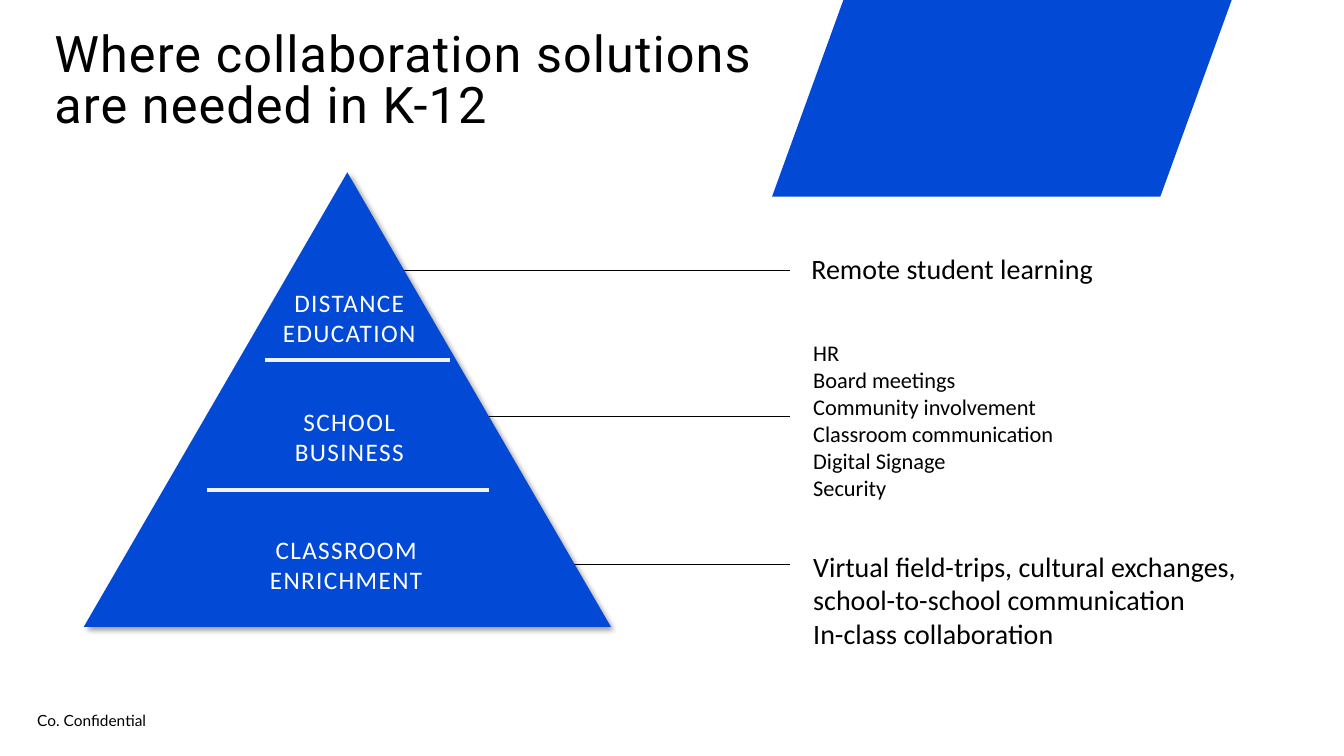
from lxml import etree
from pptx import Presentation
from pptx.dml.color import RGBColor
from pptx.enum.shapes import MSO_CONNECTOR, MSO_SHAPE
from pptx.enum.text import MSO_ANCHOR, PP_ALIGN
from pptx.oxml.ns import qn
from pptx.util import Pt

LINE = MSO_CONNECTOR.STRAIGHT
TRIANGLE, PARALLELOGRAM = MSO_SHAPE.ISOSCELES_TRIANGLE, MSO_SHAPE.PARALLELOGRAM
TOP, MIDDLE = MSO_ANCHOR.TOP, MSO_ANCHOR.MIDDLE
LEFT, CENTER = PP_ALIGN.LEFT, PP_ALIGN.CENTER
BLUE, BLACK, WHITE, PALE = "0249D6", "000000", "FFFFFF", "F2F2F2"

TITLE = "Where collaboration solutions are needed in K-12"
FOOTER = "Co. Confidential"
TIERS = [
    (["DISTANCE", "EDUCATION"], 139, 201.6),
    (["SCHOOL", "BUSINESS"], 139, 286.6),
    (["CLASSROOM", "ENRICHMENT"], 136.8, 378),
]
USES = [
    (["Remote student learning"], 20, 572.4, 176.4),
    (["HR", "Board meetings", "Community involvement",
      "Classroom communication", "Digital Signage", "Security"], 16, 573.8, 239),
    (["Virtual field-trips, cultural exchanges,",
      "school-to-school communication", "In-class collaboration"], 20, 573.8, 388.8),
]
LEADERS = [(298.8, 297.4), (298.8, 403.2), (272.2, 193)]
LEADER_END = 564.5
DIVIDERS = [(189.4, 321.1, 257), (147.6, 349.2, 349.9)]


def color(value):
    return RGBColor.from_string(value)


def add_line(s, x1, x2, y, stroke, width):
    line = s.shapes.add_connector(LINE, Pt(x1), Pt(y), Pt(x2), Pt(y))
    line.line.color.rgb = color(stroke)
    line.line.width = Pt(width)
    etree.SubElement(line._element.spPr, qn("a:effectLst"))


def add_solid(s, kind, x, y, w, h):
    sp = s.shapes.add_shape(kind, Pt(x), Pt(y), Pt(w), Pt(h))
    sp.fill.solid()
    sp.fill.fore_color.rgb = color(BLUE)
    sp.line.fill.background()
    sp.shadow.inherit = False
    return sp


def add_shadow(sp):
    effects = sp._element.spPr.find(qn("a:effectLst"))
    shadow = etree.SubElement(effects, qn("a:outerShdw"), blurRad=str(Pt(4)),
                              dist=str(Pt(3)), dir="2700000", algn="tl", rotWithShape="0")
    tint = etree.SubElement(shadow, qn("a:srgbClr"), val=BLACK)
    etree.SubElement(tint, qn("a:alpha"), val="40000")


def add_text(s, lines, x, y, w, h, size, font="Calibri", fill=BLACK, align=LEFT,
             anchor=TOP, insets=(7.2, 3.6, 7.2, 3.6), spacing=None, tracking=0):
    tf = s.shapes.add_textbox(Pt(x), Pt(y), Pt(w), Pt(h)).text_frame
    tf.word_wrap = True
    tf.vertical_anchor = anchor
    tf.margin_left, tf.margin_top, tf.margin_right, tf.margin_bottom = map(Pt, insets)
    for i, line in enumerate(lines):
        p = tf.add_paragraph() if i else tf.paragraphs[0]
        p.alignment = align
        p.line_spacing = spacing
        r = p.add_run()
        r.text = line
        r.font.size = Pt(size)
        r.font.name = font
        r.font.color.rgb = color(fill)
        if tracking:
            r._r.get_or_add_rPr().set("spc", str(round(tracking * 100)))


def main():
    prs = Presentation()
    prs.slide_width, prs.slide_height = Pt(960), Pt(540)
    s = prs.slides.add_slide(prs.slide_layouts[6])

    banner = add_solid(s, PARALLELOGRAM, 551.5, 0, 328.3, 140.4)
    banner.adjustments[0] = 0.363
    add_text(s, [FOOTER], 26.6, 507.6, 211.7, 13.7, 11, "Lato", insets=(0, 0, 0, 0))
    for x, y in LEADERS:
        add_line(s, x, LEADER_END, y, BLACK, 0.5)
    add_text(s, [TITLE], 38.9, 35.3, 506.9, 47.5, 36, "Roboto", anchor=MIDDLE,
             insets=(0, 3.6, 7.2, 3.6), spacing=0.85, tracking=0.8)

    add_shadow(add_solid(s, TRIANGLE, 59.8, 123.1, 376.6, 324.7))
    for lines, x, y in TIERS:
        add_text(s, lines, x, y, 221, 51, 18, fill=WHITE, align=CENTER, tracking=1)
    for lines, size, x, y in USES:
        add_text(s, lines, x, y, 358, len(lines) * size * 1.2 + 7.2, size)
    for x1, x2, y in DIVIDERS:
        add_line(s, x1, x2, y, PALE, 3)

    prs.save("out.pptx")


if __name__ == "__main__":
    main()
